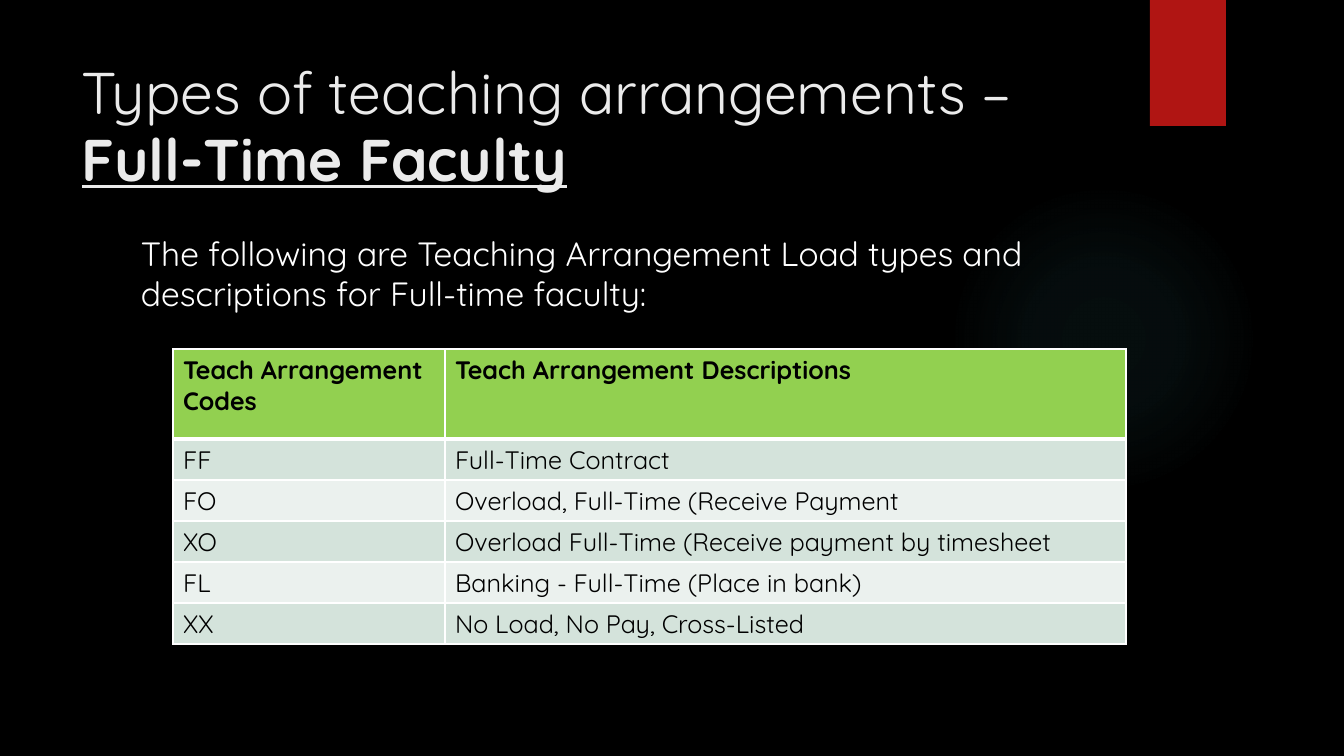
from pptx import Presentation
from pptx.dml.color import RGBColor
from pptx.enum.shapes import MSO_SHAPE as Shape
from pptx.enum.text import MSO_ANCHOR as Anchor
from pptx.oxml import parse_xml
from pptx.oxml.ns import nsdecls
from pptx.util import Pt

PX = 12192000 / 1344
FONT = "Quicksand"
COLORS = {
    "background": "000000", "glow": "50B9C1", "ribbon": "B01513",
    "title": "EBEBEB", "white": "FFFFFF", "black": "000000",
    "header": "92D050", "odd": "D4E3DB", "even": "EBF1EE",
}


def px(*lengths):
    return [round(length * PX) for length in lengths]


def style(para, size, color, bold=False):
    for span in para.runs:
        span.font.name = FONT
        span.font.size = Pt(size)
        span.font.bold = bold
        span.font.color.rgb = RGBColor.from_string(COLORS[color])


deck = Presentation()
deck.slide_width, deck.slide_height = px(1344, 756)
page = deck.slides.add_slide(deck.slide_layouts[6])
page.background.fill.solid()
page.background.fill.fore_color.rgb = RGBColor.from_string(COLORS["background"])

# Soft round glow
glow = page.shapes.add_shape(Shape.OVAL, *px(949, 184, 310, 310))
glow.shadow.inherit = False
glow.line.fill.background()
stops = "".join(
    f'<a:gs pos="{place * 1000}"><a:srgbClr val="{COLORS["glow"]}">'
    f'<a:alpha val="{alpha * 1000}"/></a:srgbClr></a:gs>'
    for place, alpha in [(0, 7), (36, 6), (69, 0), (100, 0)]
)
gradient = parse_xml(
    f'<a:gradFill {nsdecls("a")}><a:gsLst>{stops}</a:gsLst><a:path path="circle">'
    '<a:fillToRect l="50000" t="50000" r="50000" b="50000"/></a:path></a:gradFill>'
)
glow._element.spPr.find("{*}prstGeom").addnext(gradient)

# Red ribbon
ribbon = page.shapes.add_shape(Shape.RECTANGLE, *px(1150, 0, 76, 126))
ribbon.shadow.inherit = False
ribbon.line.fill.background()
ribbon.fill.solid()
ribbon.fill.fore_color.rgb = RGBColor.from_string(COLORS["ribbon"])

# Title
title = page.shapes.add_textbox(*px(72, 50, 1037, 155)).text_frame
title.word_wrap = True
title.vertical_anchor = Anchor.MIDDLE
para = title.paragraphs[0]
para.line_spacing = 0.95
for words in ("Types of teaching arrangements – ", "Full-Time Faculty"):
    para.add_run().text = words
style(para, 42, "title")
para.runs[1].font.bold = True
para.runs[1].font.underline = True

# Introduction
intro = page.shapes.add_textbox(*px(131, 228, 986, 112)).text_frame
intro.word_wrap = True
intro.text = (
    "The following are Teaching Arrangement Load types "
    "and descriptions for Full-time faculty:"
)
style(intro.paragraphs[0], 24, "white")

# Table of arrangement codes
arrangements = [
    ("Teach Arrangement Codes", "Teach Arrangement Descriptions"),
    ("FF", "Full-Time Contract"),
    ("FO", "Overload, Full-Time (Receive Payment"),
    ("XO", "Overload Full-Time (Receive payment by timesheet"),
    ("FL", "Banking - Full-Time (Place in bank)"),
    ("XX", "No Load, No Pay, Cross-Listed"),
]
table = page.shapes.add_table(len(arrangements), 2, *px(173, 349, 953, 295)).table
for column, width in zip(table.columns, px(272, 681)):
    column.width = width

for row_index, texts in enumerate(arrangements):
    is_header = row_index == 0
    table.rows[row_index].height = px(90 if is_header else 41)[0]
    fill = "header" if is_header else "odd" if row_index % 2 else "even"
    widths = {
        "L": 1, "R": 1,
        "T": 3 if row_index == 1 else 1,
        "B": 3 if is_header else 1,
    }
    for column_index, text in enumerate(texts):
        cell = table.cell(row_index, column_index)
        cell.text = text
        style(cell.text_frame.paragraphs[0], 18, "black", bold=is_header)
        cell.fill.solid()
        cell.fill.fore_color.rgb = RGBColor.from_string(COLORS[fill])
        # Borders come before the fill
        for order, (side, points) in enumerate(widths.items()):
            border = parse_xml(
                f'<a:ln{side} {nsdecls("a")} w="{Pt(points)}"><a:solidFill>'
                f'<a:srgbClr val="{COLORS["white"]}"/></a:solidFill></a:ln{side}>'
            )
            cell._tc.get_or_add_tcPr().insert(order, border)

deck.save("out.pptx")
